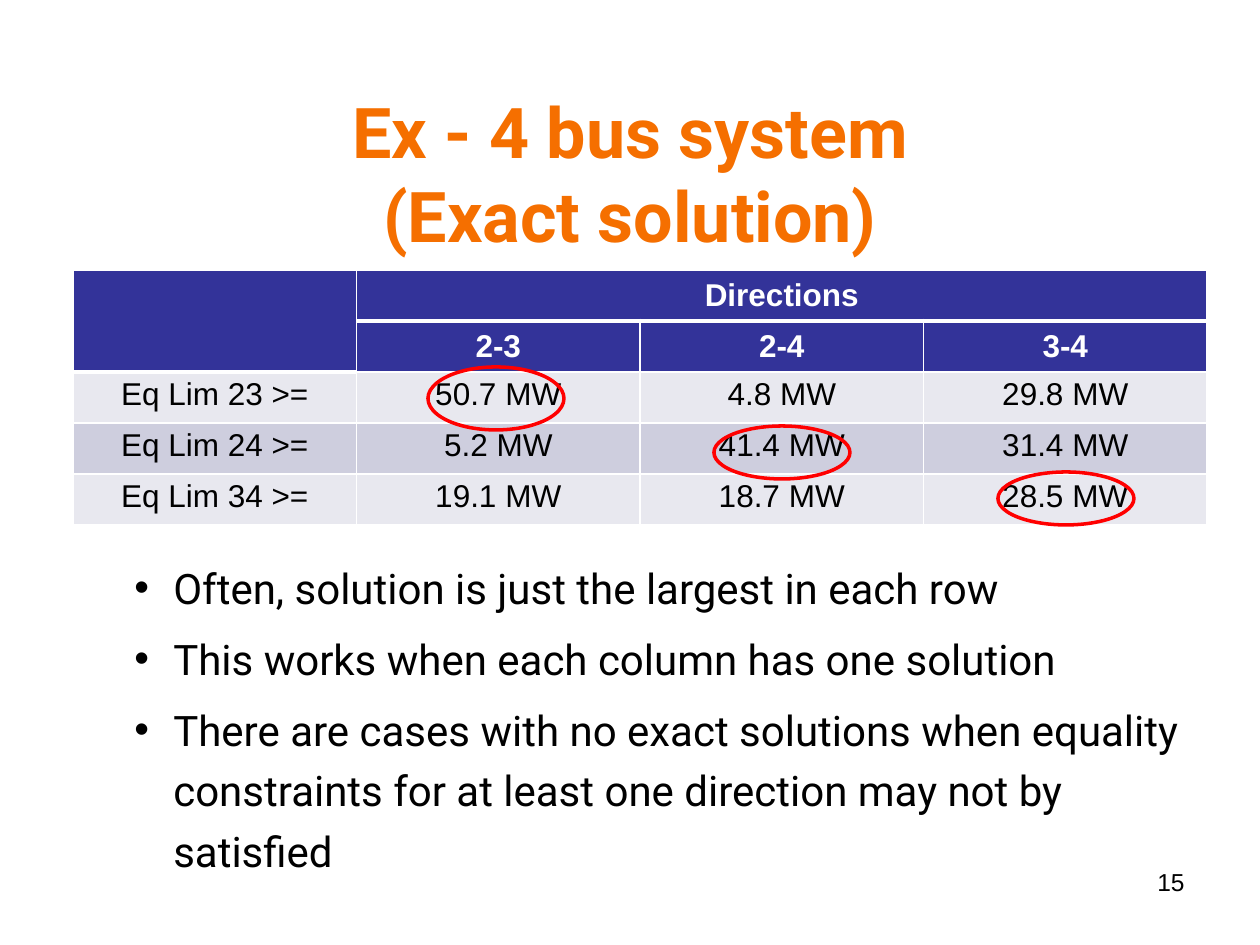
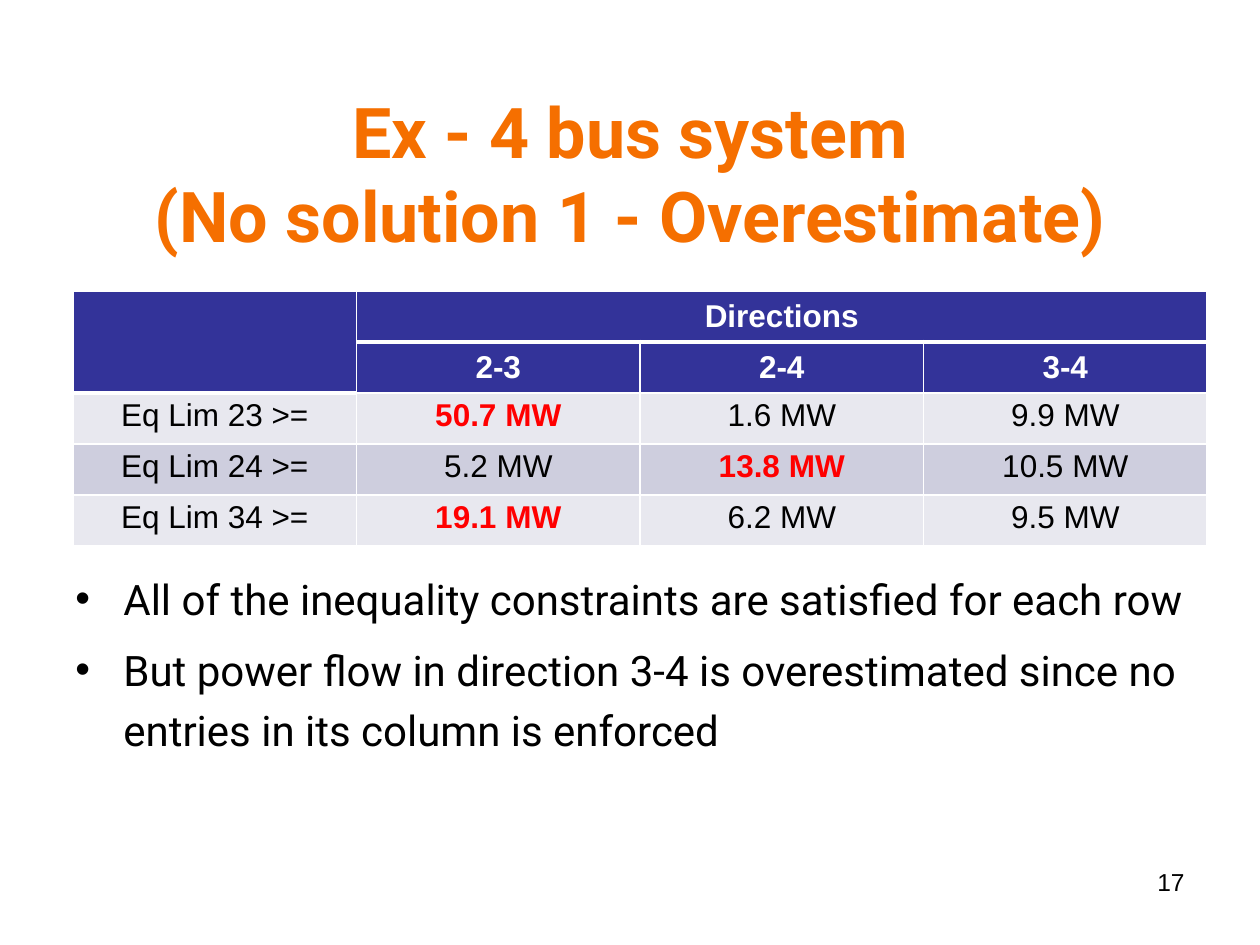
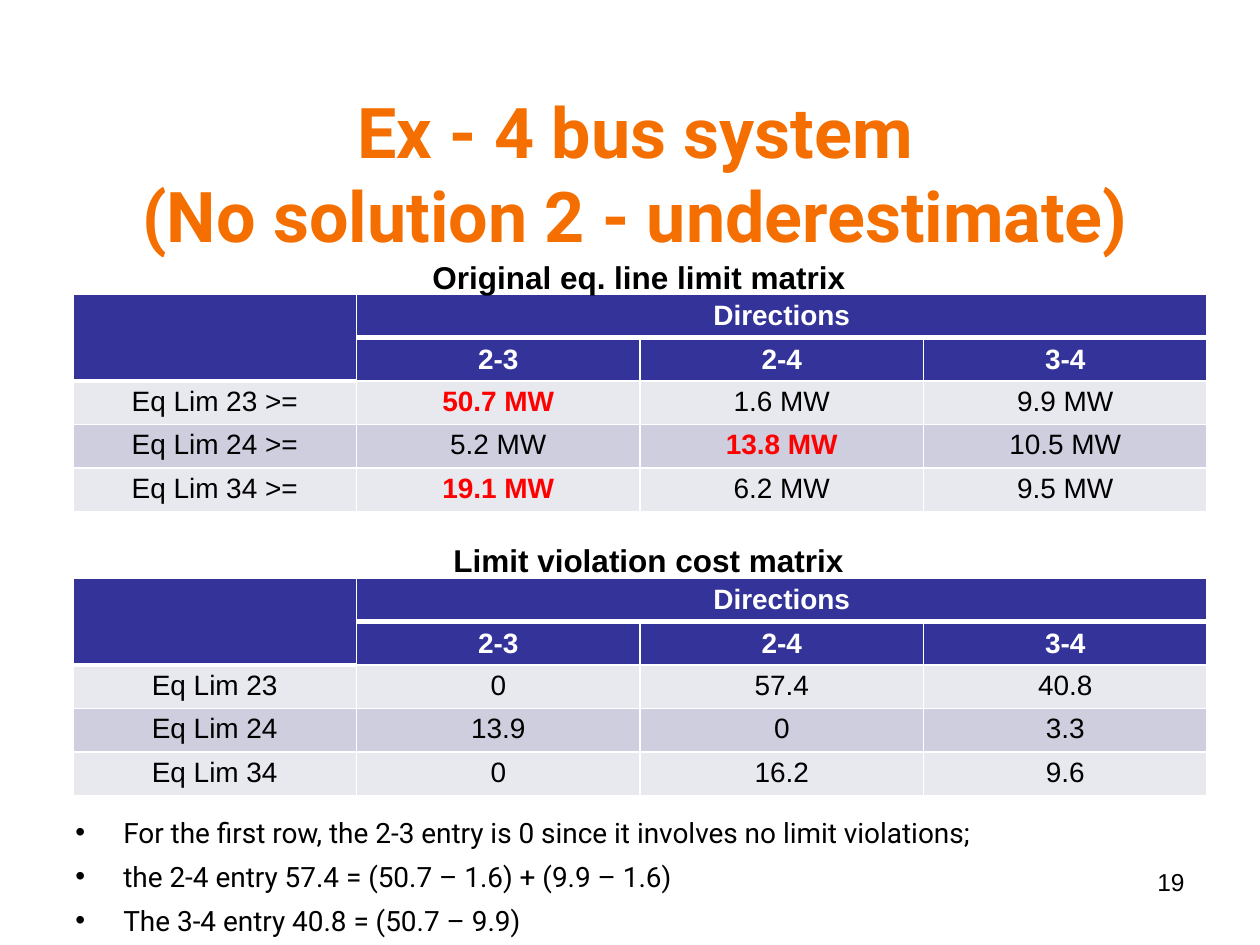
from lxml import etree
from pptx import Presentation
from pptx.dml.color import RGBColor
from pptx.enum.shapes import MSO_SHAPE
from pptx.enum.text import MSO_ANCHOR, MSO_AUTO_SIZE, PP_ALIGN
from pptx.oxml.ns import qn
from pptx.util import Emu, Inches, Pt

COLORS = {
    "title": "F56F00",
    "text": "000000",
    "header": "333399",
    "header_text": "FFFFFF",
    "odd_row": "E8E8EF",
    "even_row": "CECEDE",
    "border": "FFFFFF",
    "highlight": "FF0000",
}
HEADING_FONT, TABLE_FONT = "Roboto", "Arial"
PX_PER_INCH = 126

TABLE_LEFT, TABLE_WIDTH = 73, 1134
CELL_MARGIN = 5
DIRECTIONS = ["2-3", "2-4", "3-4"]
PAGE_NUMBER_BOX = (903, 861, 294, 66)

EXACT_LIMITS = [
    ("Eq Lim 23 >=", "50.7 MW", "4.8 MW", "29.8 MW"),
    ("Eq Lim 24 >=", "5.2 MW", "41.4 MW", "31.4 MW"),
    ("Eq Lim 34 >=", "19.1 MW", "18.7 MW", "28.5 MW"),
]
UNSOLVED_LIMITS = [
    ("Eq Lim 23 >=", "50.7 MW", "1.6 MW", "9.9 MW"),
    ("Eq Lim 24 >=", "5.2 MW", "13.8 MW", "10.5 MW"),
    ("Eq Lim 34 >=", "19.1 MW", "6.2 MW", "9.5 MW"),
]
ROW_MAXIMA = {"50.7 MW", "13.8 MW", "19.1 MW"}
VIOLATION_COSTS = [
    ("Eq Lim 23", "0", "57.4", "40.8"),
    ("Eq Lim 24", "13.9", "0", "3.3"),
    ("Eq Lim 34", "0", "16.2", "9.6"),
]

SLIDES = [
    {
        "title": "Ex - 4 bus system\n(Exact solution)",
        "title_width": 1134,
        "page": "15",
        "tables": [dict(rows=EXACT_LIMITS, top=270, height=255, size=18)],
        "circles": [(428, 367, 136, 63), (714, 426, 136, 53), (998, 472, 136, 53)],
        "bullets": [
            "Often, solution is just the largest in each row",
            "This works when each column has one solution",
            "There are cases with no exact solutions when equality constraints "
            "for at least one direction may not by satisfied",
        ],
        "bullet_box": (59, 546, 1134, 339),
        "bullet_format": dict(size=24, line_spacing=1.2, indent=102, hanging=39),
    },
    {
        "title": "Ex - 4 bus system\n(No solution 1 - Overestimate)",
        "title_width": 1134,
        "page": "17",
        "tables": [dict(rows=UNSOLVED_LIMITS, top=291, height=255, size=18,
                        highlights=ROW_MAXIMA)],
        "bullets": [
            "All of the inequality constraints are satisfied for each row",
            "But power flow in direction 3-4 is overestimated since no entries "
            "in its column is enforced",
        ],
        "bullet_box": (63, 557, 1134, 344),
        "bullet_format": dict(size=24, line_spacing=1.2, indent=48, hanging=48),
    },
    {
        "title": "Ex - 4 bus system\n(No solution 2 - underestimate)",
        "title_width": 1144,
        "page": "19",
        "tables": [
            dict(rows=UNSOLVED_LIMITS, top=294, height=218, size=16,
                 highlights=ROW_MAXIMA),
            dict(rows=VIOLATION_COSTS, top=578, height=218, size=16),
        ],
        "captions": [
            ("Original eq. line limit matrix", (420, 252, 472, 50)),
            ("Limit violation cost matrix", (441, 535, 472, 50)),
        ],
        "bullets": [
            "For the first row, the 2-3 entry is 0 since it involves no limit violations;",
            "the 2-4 entry 57.4 = (50.7 – 1.6) + (9.9 – 1.6)",
            "The 3-4 entry 40.8 = (50.7 – 9.9)",
        ],
        "bullet_box": (63, 809, 1134, 126),
        "bullet_format": dict(size=16, indent=48, hanging=48),
    },
]


def px(length):
    return Emu(round(Inches(length) / PX_PER_INCH))


def px_box(box):
    return [px(length) for length in box]


def rgb(color):
    return RGBColor.from_string(COLORS[color])


def add_bullet(paragraph, indent, hanging):
    properties = paragraph._p.get_or_add_pPr()
    properties.set("marL", str(px(indent)))
    properties.set("indent", str(-px(hanging)))
    etree.SubElement(properties, qn("a:buFont"), typeface="Arial")
    etree.SubElement(properties, qn("a:buChar"), char="•")


def write(frame, text, size=18, font=TABLE_FONT, color="text", bold=False,
          align=PP_ALIGN.LEFT, line_spacing=None, space_before=0,
          indent=None, hanging=0):
    """Fill a text frame with one string, or with a list of paragraphs."""
    for index, line in enumerate([text] if isinstance(text, str) else text):
        paragraph = frame.add_paragraph() if index else frame.paragraphs[0]
        paragraph.text = line
        paragraph.alignment = align
        if line_spacing:
            paragraph.line_spacing = line_spacing
        if index:
            paragraph.space_before = Pt(space_before)
        if indent is not None:
            add_bullet(paragraph, indent, hanging)
        for part in [paragraph, *paragraph.runs]:
            part.font.size = Pt(size)
            part.font.name = font
            part.font.bold = bold
            part.font.color.rgb = rgb(color)


def add_text(slide, text, box, **text_format):
    frame = slide.shapes.add_textbox(*px_box(box)).text_frame
    frame.word_wrap = True
    write(frame, text, **text_format)


def set_title(slide, text, width):
    title = slide.shapes.title
    title.left, title.top, title.width, title.height = px_box((63, 94, width, 158))
    frame = title.text_frame
    frame.auto_size = MSO_AUTO_SIZE.NONE
    frame.vertical_anchor = MSO_ANCHOR.MIDDLE
    write(frame, text, size=40, font=HEADING_FONT, color="title", bold=True,
          align=PP_ALIGN.CENTER)


def set_borders(cell, **widths):
    for side in "LRTB":
        line = etree.SubElement(cell._tc.get_or_add_tcPr(), qn(f"a:ln{side}"),
                                w=str(Pt(widths.get(side, 1))))
        fill = etree.SubElement(line, qn("a:solidFill"))
        etree.SubElement(fill, qn("a:srgbClr"), val=COLORS["border"])


def add_matrix(slide, rows, top, height, size, highlights=()):
    """Add a table whose two header rows hold a corner and the directions."""
    grid = [("", "Directions", "", ""), ("", *DIRECTIONS), *rows]
    table = slide.shapes.add_table(
        len(grid), len(grid[0]),
        *px_box((TABLE_LEFT, top, TABLE_WIDTH, height))).table
    table.first_row = table.horz_banding = False
    for row in table.rows:
        row.height = px(height / len(grid))
    for r, texts in enumerate(grid):
        for c, text in enumerate(texts):
            cell = table.cell(r, c)
            is_header = r < 2
            is_highlight = text in highlights
            heavy_row = 0 if c else 1
            set_borders(cell, B=3 if r == heavy_row else 1,
                        T=3 if r == heavy_row + 1 else 1)
            cell.fill.solid()
            cell.fill.fore_color.rgb = rgb(
                "header" if is_header else "even_row" if r % 2 else "odd_row")
            cell.margin_top = cell.margin_bottom = px(CELL_MARGIN)
            cell.vertical_anchor = MSO_ANCHOR.MIDDLE if is_header else MSO_ANCHOR.TOP
            write(cell.text_frame, text, size=size, bold=is_header or is_highlight,
                  color="header_text" if is_header
                  else "highlight" if is_highlight else "text",
                  align=PP_ALIGN.CENTER)
    table.cell(0, 0).merge(table.cell(1, 0))
    table.cell(0, 1).merge(table.cell(0, len(DIRECTIONS)))


def add_circle(slide, box):
    circle = slide.shapes.add_shape(MSO_SHAPE.OVAL, *px_box(box))
    circle.shadow.inherit = False
    circle.fill.background()
    circle.line.color.rgb = rgb("highlight")
    circle.line.width = Pt(2)


def build_slide(deck, content):
    slide = deck.slides.add_slide(deck.slide_layouts[5])
    set_title(slide, content["title"], content["title_width"])
    add_text(slide, content["bullets"], content["bullet_box"], font=HEADING_FONT,
             space_before=6, **content["bullet_format"])
    add_text(slide, content["page"], PAGE_NUMBER_BOX, size=14, align=PP_ALIGN.RIGHT)
    for matrix in content["tables"]:
        add_matrix(slide, **matrix)
    for caption, box in content.get("captions", []):
        add_text(slide, caption, box, bold=True)
    for box in content.get("circles", []):
        add_circle(slide, box)


def main():
    deck = Presentation()
    deck.slide_width, deck.slide_height = Inches(10), Inches(7.5)
    for content in SLIDES:
        build_slide(deck, content)
    deck.save("out.pptx")


if __name__ == "__main__":
    main()
